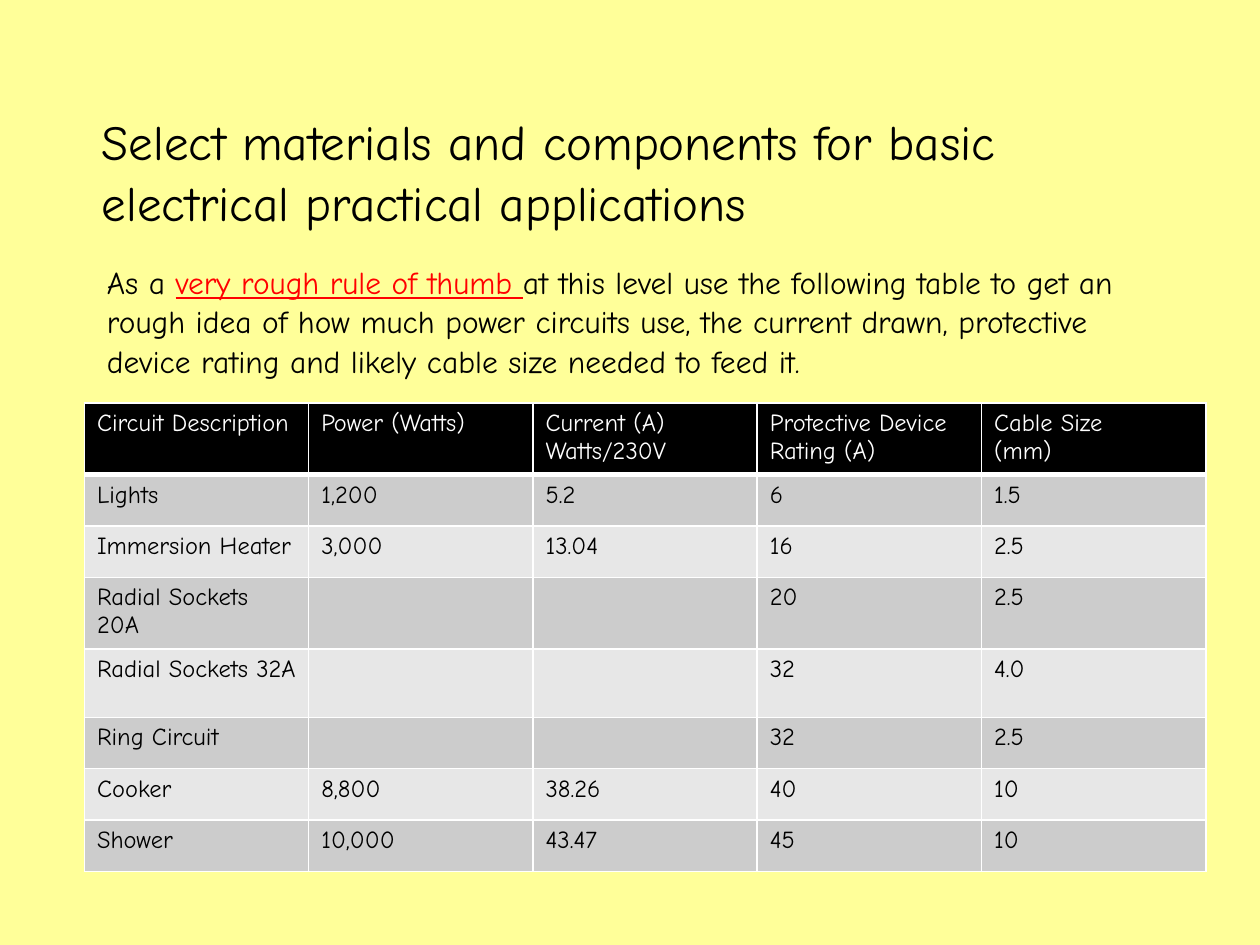
from lxml import etree
from pptx import Presentation
from pptx.dml.color import RGBColor
from pptx.enum.text import MSO_ANCHOR
from pptx.oxml.ns import qn
from pptx.util import Inches, Pt

TOP = MSO_ANCHOR.TOP
FONT = "Comic Neue"
COLORS = {
    "background": "FFFF99",
    "text": "000000",
    "emphasis": "FF0000",
    "header": "000000",
    "border": "FFFFFF",
    "odd": "CCCCCC",
    "even": "E7E7E7",
}
TITLE_BOX = (0.71, 0.81, 7.68, 0.84)
INTRO_BOX = (0.75, 2.02, 8.58, 1.1)
TABLE_BOX = (0.67, 3.2, 8.9, 3.67)
ROW_SHARES = (4, 3, 3, 4, 4, 3, 3, 3)

TITLE = "Select materials and components for basic electrical practical applications"
INTRO = (
    ("As a ", False),
    ("very rough rule of thumb ", True),
    ("at this level use the following table to get an rough idea of how much "
     "power circuits use, the current drawn, protective device rating and "
     "likely cable size needed to feed it.", False),
)
CIRCUITS = (
    ("Circuit Description", "Power (Watts)", "Current (A)\nWatts/230V",
     "Protective Device Rating (A)", "Cable Size\n(mm)"),
    ("Lights", "1,200", "5.2", "6", "1.5"),
    ("Immersion Heater", "3,000", "13.04", "16", "2.5"),
    ("Radial Sockets 20A", "", "", "20", "2.5"),
    ("Radial Sockets 32A", "", "", "32", "4.0"),
    ("Ring Circuit", "", "", "32", "2.5"),
    ("Cooker", "8,800", "38.26", "40", "10"),
    ("Shower", "10,000", "43.47", "45", "10"),
)


def rgb(name):
    return RGBColor.from_string(COLORS[name])


def set_font(paragraph, size, color):
    paragraph.font.name = FONT
    paragraph.font.size = Pt(size)
    paragraph.font.color.rgb = rgb(color)


def add_text(slide, box, parts, size, space_before=0):
    frame = slide.shapes.add_textbox(*map(Inches, box)).text_frame
    frame.word_wrap = True
    frame.vertical_anchor = TOP
    paragraph = frame.paragraphs[0]
    paragraph.space_before = Pt(space_before)
    paragraph.line_spacing = 1.05
    set_font(paragraph, size, "text")
    for text, emphasized in parts:
        run = paragraph.add_run()
        run.text = text
        if emphasized:
            run.font.underline = True
            run.font.color.rgb = rgb("emphasis")


def set_borders(cell, top, bottom):
    properties = cell._tc.get_or_add_tcPr()
    sides = (("a:lnL", 1), ("a:lnR", 1), ("a:lnT", top), ("a:lnB", bottom))
    for index, (side, width) in enumerate(sides):
        line = etree.Element(qn(side), w=str(Pt(width)))
        fill = etree.SubElement(line, qn("a:solidFill"))
        etree.SubElement(fill, qn("a:srgbClr"), val=COLORS["border"])
        properties.insert(index, line)


def add_circuit_table(slide, box, rows):
    left, top, width, height = map(Inches, box)
    column_count = len(rows[0])
    table = slide.shapes.add_table(len(rows), column_count, left, top, width, height).table
    for column in table.columns:
        column.width = width // column_count
    for index, values in enumerate(rows):
        table.rows[index].height = height * ROW_SHARES[index] // sum(ROW_SHARES)
        is_header = index == 0
        fill = "header" if is_header else "odd" if index % 2 else "even"
        for column, value in enumerate(values):
            cell = table.cell(index, column)
            cell.text = value
            cell.fill.solid()
            cell.fill.fore_color.rgb = rgb(fill)
            set_borders(cell, 3 if index == 1 else 1, 3 if is_header else 1)
            for paragraph in cell.text_frame.paragraphs:
                set_font(paragraph, 14, "border" if is_header else "text")
                paragraph.font.bold = False


def main():
    presentation = Presentation()
    presentation.slide_width, presentation.slide_height = Inches(10), Inches(7.5)
    slide = presentation.slides.add_slide(presentation.slide_layouts[6])
    slide.background.fill.solid()
    slide.background.fill.fore_color.rgb = rgb("background")
    add_text(slide, TITLE_BOX, [(TITLE, False)], 28)
    add_text(slide, INTRO_BOX, INTRO, 18, 4.8)
    add_circuit_table(slide, TABLE_BOX, CIRCUITS)
    presentation.save("out.pptx")


if __name__ == "__main__":
    main()
